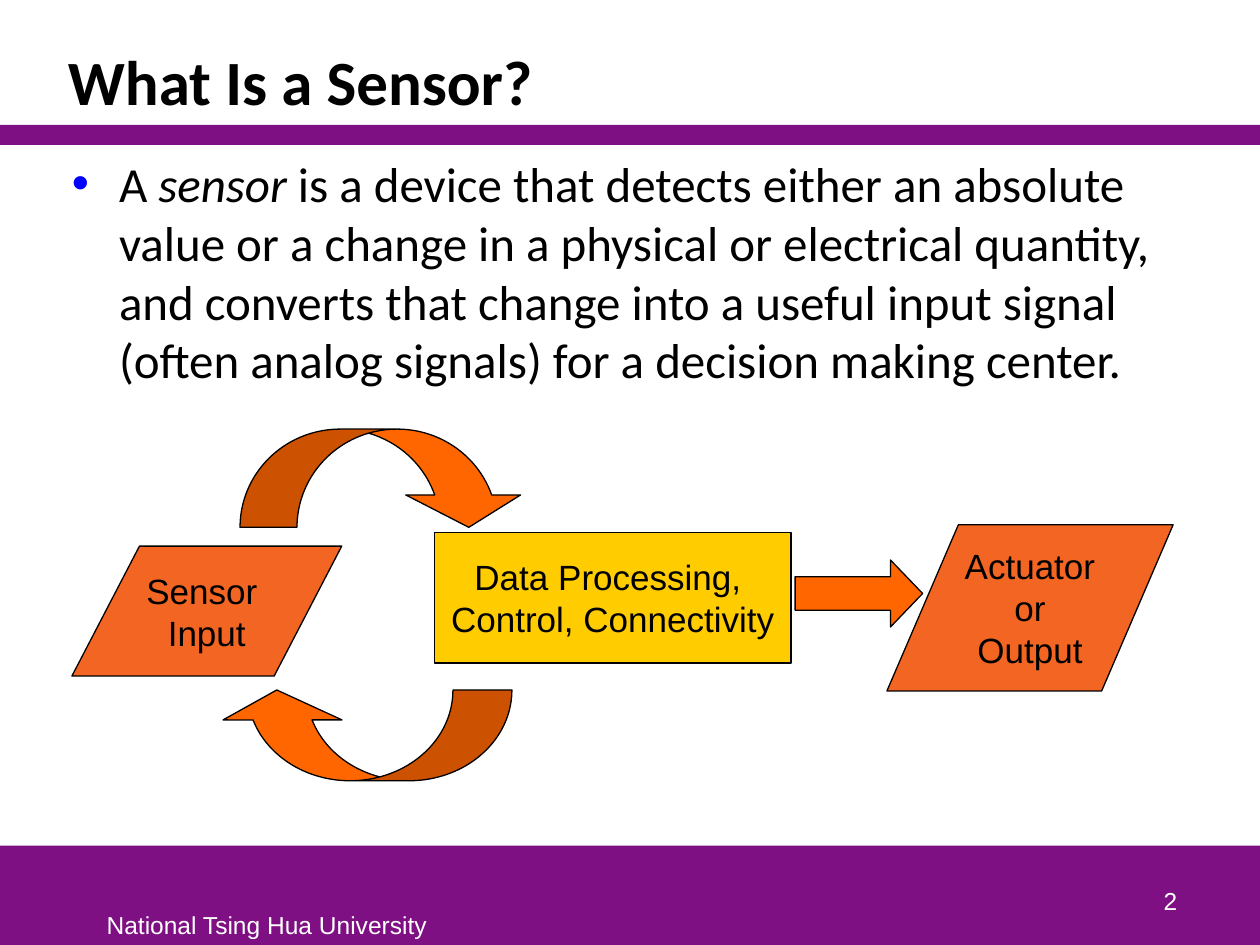
import dataclasses

import pptx
import pptx.dml.color
import pptx.enum.shapes
import pptx.enum.text
import pptx.oxml.ns
import pptx.util
from lxml import etree

Cm = pptx.util.Cm
Pt = pptx.util.Pt
Shape = pptx.enum.shapes.MSO_SHAPE
Align = pptx.enum.text.PP_ALIGN
Anchor = pptx.enum.text.MSO_ANCHOR


@dataclasses.dataclass(frozen=True)
class Theme:
    band: str = "7F1084"
    ink: str = "000000"
    paper: str = "FFFFFF"
    bullet: str = "0000FF"
    process: str = "FFCC00"
    endpoint: str = "F26522"
    arrow: str = "FF6600"
    heading_font: str = "Calibri"
    label_font: str = "Arial"
    title_size: int = 36
    body_size: int = 28
    label_size: int = 20
    footer_size: int = 14
    outline: float = 0.75


@dataclasses.dataclass(frozen=True)
class Box:
    """A rectangle in centimetres."""
    left: float
    top: float
    width: float
    height: float

    def inside(self, left, top, width, height):
        return Box(self.left + left, self.top + top, width, height)

    def lengths(self):
        return [Cm(v) for v in (self.left, self.top, self.width, self.height)]


THEME = Theme()


def rgb(code):
    return pptx.dml.color.RGBColor.from_string(code)


def write(frame, paragraphs, *, size, font=THEME.label_font, color=THEME.ink, bold=False,
          align=Align.LEFT, anchor=Anchor.TOP, wrap=True, spacing=None, bullet=None, indent=0):
    """Fill a text frame; each paragraph is a list of (text, italic) spans."""
    frame.word_wrap = wrap
    frame.vertical_anchor = anchor
    for number, spans in enumerate(paragraphs):
        para = frame.paragraphs[0] if number == 0 else frame.add_paragraph()
        para.alignment = align
        if spacing:
            para.line_spacing = spacing
        if bullet:
            add_bullet(para, bullet, indent)
        for text, italic in spans:
            span = para.add_run()
            span.text = text
            span.font.name = font
            span.font.size = Pt(size)
            span.font.bold = bold
            span.font.italic = italic
            span.font.color.rgb = rgb(color)


def add_bullet(para, color, indent):
    qn = pptx.oxml.ns.qn
    properties = para._p.get_or_add_pPr()
    properties.set("marL", str(Cm(indent)))
    properties.set("indent", str(-Cm(indent)))
    tint = etree.SubElement(properties, qn("a:buClr"))
    etree.SubElement(tint, qn("a:srgbClr"), val=color)
    etree.SubElement(properties, qn("a:buFont"), typeface="Arial")
    etree.SubElement(properties, qn("a:buChar"), char="•")


def add_text(page, box, *lines, **style):
    frame = page.shapes.add_textbox(*box.lengths()).text_frame
    write(frame, [[(line, False)] for line in lines], **style)


def add_block(page, kind, box, fill, outlined=True, adjustments=()):
    block = page.shapes.add_shape(kind, *box.lengths())
    block.shadow.inherit = False
    block.fill.solid()
    block.fill.fore_color.rgb = rgb(fill)
    if outlined:
        block.line.color.rgb = rgb(THEME.ink)
        block.line.width = Pt(THEME.outline)
    else:
        block.line.fill.background()
    for number, value in enumerate(adjustments):
        block.adjustments[number] = value
    return block


def add_labelled_block(page, kind, box, fill, *lines, adjustments=()):
    block = add_block(page, kind, box, fill, adjustments=adjustments)
    write(block.text_frame, [[(line, False)] for line in lines], size=THEME.label_size,
          align=Align.CENTER, anchor=Anchor.MIDDLE, wrap=False)


def add_turned_arrow(page, box, rotation, adjustments):
    """Place a curved arrow, turned a quarter, so that it covers the box."""
    upright = box.inside((box.width - box.height) / 2, (box.height - box.width) / 2,
                         box.height, box.width)
    arrow = add_block(page, Shape.CURVED_LEFT_ARROW, upright, THEME.arrow,
                      adjustments=adjustments)
    arrow.rotation = rotation


def draw_footer(page, box):
    add_block(page, Shape.RECTANGLE, box, THEME.band, outlined=False)
    add_text(page, box.inside(1.9, 1.17, 7, 0.84), "National Tsing Hua University",
             size=THEME.footer_size, color=THEME.paper, wrap=False)
    add_text(page, box.inside(18.7, 0.25, 5.28, 1.27), "2", size=THEME.footer_size,
             color=THEME.paper, align=Align.RIGHT, anchor=Anchor.BOTTOM)


def draw_heading(page, box):
    rule = 0.4
    add_block(page, Shape.RECTANGLE, box.inside(0, box.height - rule, box.width, rule),
              THEME.band, outlined=False)
    add_text(page, box.inside(1.12, 0.64, 22.78, 1.88), "What Is a Sensor?",
             size=THEME.title_size, font=THEME.heading_font, bold=True,
             anchor=Anchor.BOTTOM, spacing=0.85)


def draw_definition(page, box):
    spans = [
        ("A ", False),
        ("sensor", True),
        (" is a device that detects either an absolute value or a change in a physical or "
         "electrical quantity, and converts that change into a useful input signal (often "
         "analog signals) for a decision making center.", False),
    ]
    frame = page.shapes.add_textbox(*box.lengths()).text_frame
    write(frame, [spans], size=THEME.body_size, font=THEME.heading_font,
          bullet=THEME.bullet, indent=0.95)


def draw_signal_flow(page, box):
    add_labelled_block(page, Shape.RECTANGLE, box.inside(7.31, 2.08, 7.19, 2.64),
                       THEME.process, "Data Processing, ", "Control, Connectivity")
    add_labelled_block(page, Shape.PARALLELOGRAM, box.inside(0, 2.36, 5.44, 2.62),
                       THEME.endpoint, "Sensor ", "Input", adjustments=[0.52])
    add_labelled_block(page, Shape.PARALLELOGRAM, box.inside(16.43, 1.93, 5.77, 3.35),
                       THEME.endpoint, "Actuator", "or", "Output", adjustments=[0.43])
    add_turned_arrow(page, box.inside(2.93, 5.26, 5.94, 1.83), 90, [0.65, 1.31, 0.33])
    add_turned_arrow(page, box.inside(3.39, 0, 5.77, 1.98), 270, [0.58, 1.17, 0.33])
    add_block(page, Shape.RIGHT_ARROW, box.inside(14.58, 2.64, 2.57, 1.35),
              THEME.arrow, adjustments=[0.5, 0.48])


def main():
    deck = pptx.Presentation()
    deck.slide_width, deck.slide_height = Cm(25.4), Cm(19.05)
    page = deck.slides.add_slide(deck.slide_layouts[6])
    draw_footer(page, Box(0, 17.05, 25.4, 2))
    draw_heading(page, Box(0, 0, 25.4, 2.92))
    draw_definition(page, Box(1.2, 2.97, 22.7, 5.4))
    draw_signal_flow(page, Box(1.45, 8.65, 22.2, 7.09))
    deck.save("out.pptx")


if __name__ == "__main__":
    main()
